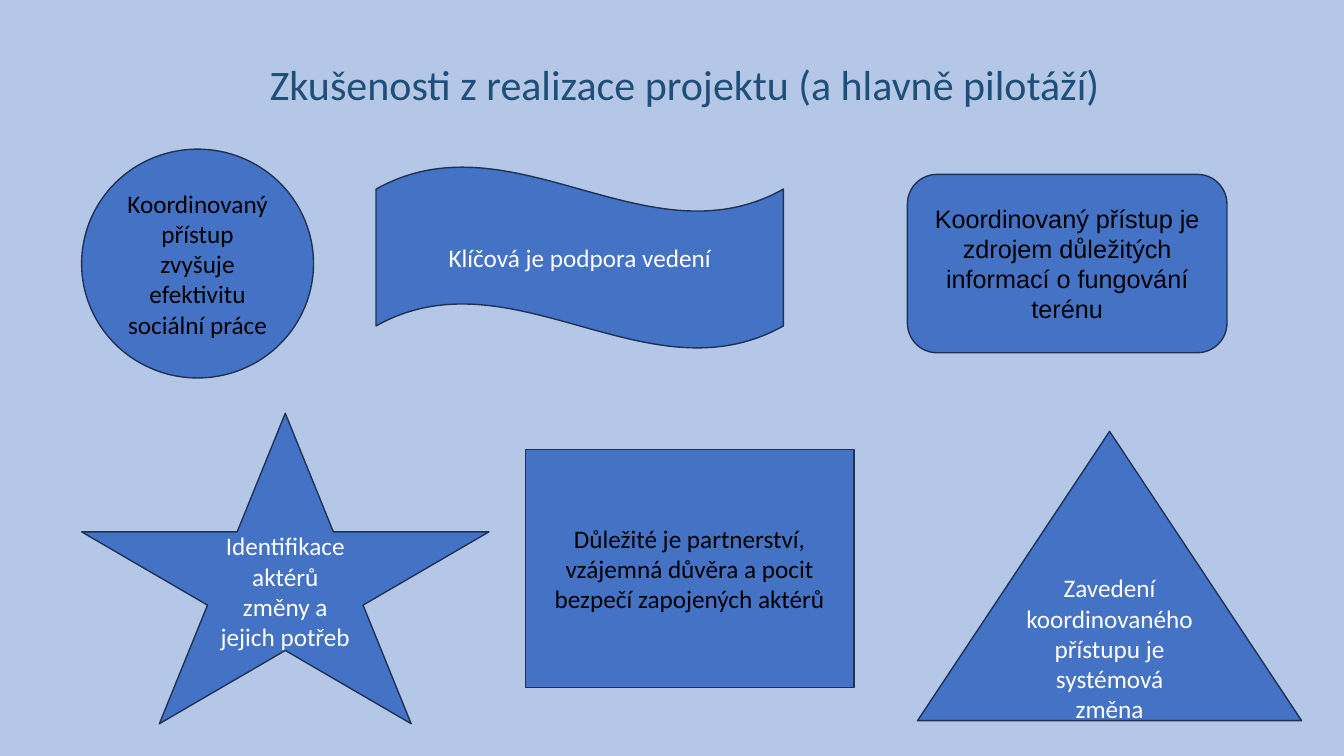
from pptx import Presentation
from pptx.dml.color import RGBColor as Rgb
from pptx.enum.shapes import MSO_SHAPE as Kind
from pptx.enum.text import MSO_ANCHOR as Anchor, PP_ALIGN as Align
from pptx.util import Inches, Pt

THEME = {
    "back": "B4C7E7", "fill": "4472C4", "edge": "1E3256",
    "title": "1F4E79", "dark": "000000", "light": "FFFFFF",
    "head": 30, "body": 18, "line": 1,
    "font": "Calibri", "alt": "Arial",
}

TITLE = "Zkušenosti z realizace projektu (a hlavně pilotáží) "
SPOT = (0.47, 0.53, 12.74, 0.61)

ITEMS = [
    (Kind.OVAL, (0.81, 1.48, 2.3, 2.27), "dark", "font",
     "Koordinovaný přístup zvyšuje efektivitu sociální práce"),
    (Kind.ROUNDED_RECTANGLE, (9, 1.73, 3.17, 1.77), "dark", "alt",
     "Koordinovaný přístup je zdrojem důležitých informací o fungování terénu"),
    (Kind.ISOSCELES_TRIANGLE, (9.1, 4.28, 3.81, 2.87), "light", "font",
     "Zavedení koordinovaného přístupu je systémová změna"),
    (Kind.STAR_5_POINT, (0.81, 4.1, 4.04, 3.08), "light", "font",
     "Identifikace aktérů změny a jejich potřeb"),
    (Kind.WAVE, (3.73, 1.65, 4.04, 1.81), "light", "font",
     "Klíčová je podpora vedení"),
    (Kind.RECTANGLE, (5.21, 4.46, 3.26, 2.36), "dark", "font",
     "Důležité je partnerství, vzájemná důvěra a pocit bezpečí zapojených aktérů"),
]


def tint(name):
    return Rgb.from_string(THEME[name])


def write(shape, text, size, color, font="font"):
    frame = shape.text_frame
    frame.word_wrap = True
    para = frame.paragraphs[0]
    para.alignment = Align.CENTER
    run = para.add_run()
    run.text = text
    run.font.size = Pt(THEME[size])
    run.font.name = THEME[font]
    run.font.color.rgb = tint(color)
    return frame


def draw(slide, kind, spot, color, font, text):
    shape = slide.shapes.add_shape(kind, *map(Inches, spot))
    shape.shadow.inherit = False
    shape.fill.solid()
    shape.fill.fore_color.rgb = tint("fill")
    shape.line.color.rgb = tint("edge")
    shape.line.width = Pt(THEME["line"])
    write(shape, text, "body", color, font).vertical_anchor = Anchor.MIDDLE


def main():
    deck = Presentation()
    deck.slide_width, deck.slide_height = Inches(13.33), Inches(7.5)
    slide = deck.slides.add_slide(deck.slide_layouts[6])
    slide.background.fill.solid()
    slide.background.fill.fore_color.rgb = tint("back")
    write(slide.shapes.add_textbox(*map(Inches, SPOT)), TITLE, "head", "title")
    for item in ITEMS:
        draw(slide, *item)
    deck.save("out.pptx")


if __name__ == "__main__":
    main()
